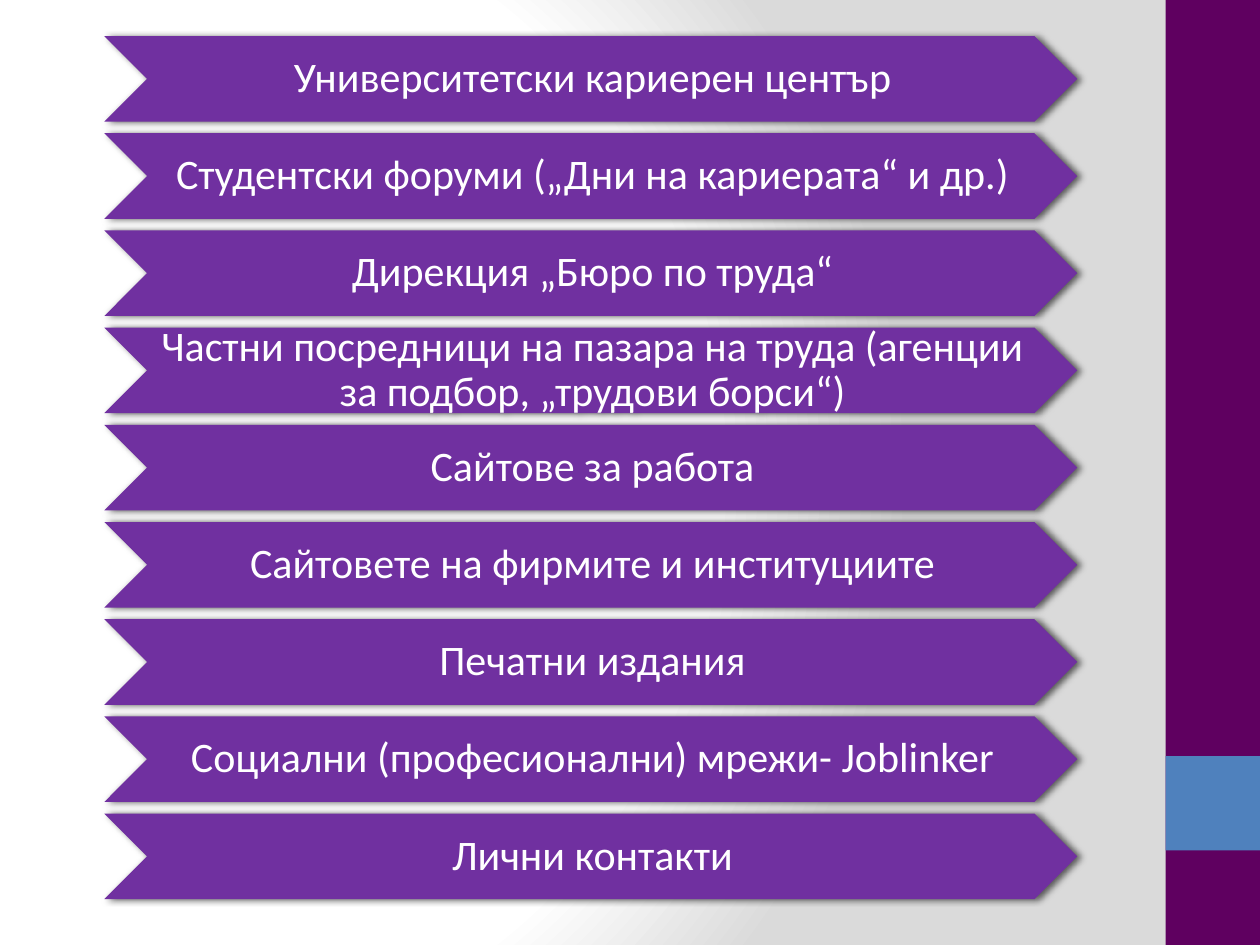
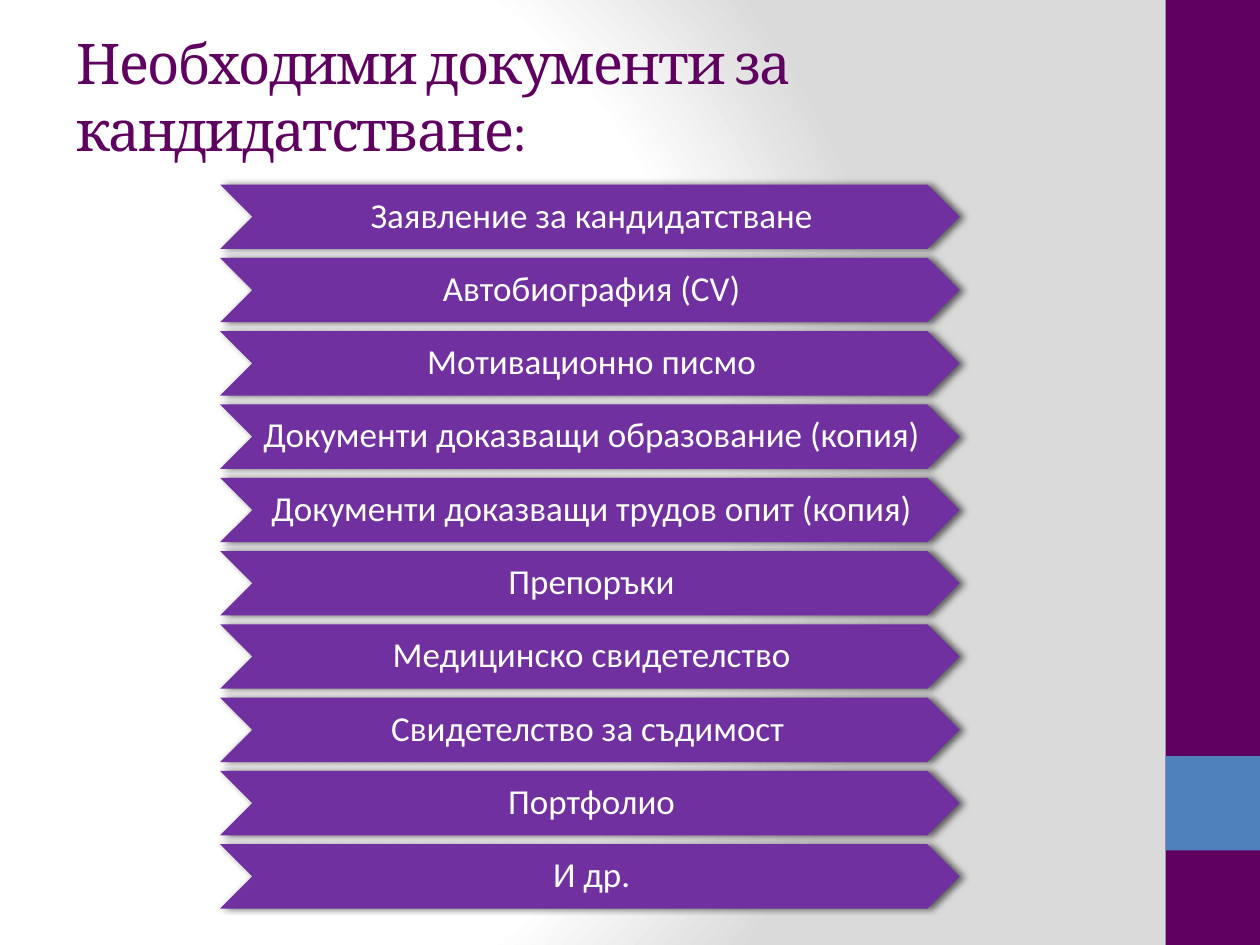
import dataclasses
import typing

import pptx
import pptx.dml.color
import pptx.enum.shapes
import pptx.enum.text
import pptx.oxml
import pptx.oxml.ns
import pptx.util

Pt = pptx.util.Pt
SHAPES = pptx.enum.shapes.MSO_SHAPE
ALIGN = pptx.enum.text.PP_ALIGN
MIDDLE = pptx.enum.text.MSO_ANCHOR.MIDDLE

COLORS = {
    "white": "FFFFFF",
    "grey": "DADADA",
    "plum": "5F0060",
    "blue": "4F81BD",
    "purple": "7030A0",
    "black": "000000",
}
WIDTH, HEIGHT = 720, 540


@dataclasses.dataclass(frozen=True)
class Box:
    left: float
    top: float
    width: float
    height: float

    def points(self) -> list:
        return [Pt(side) for side in dataclasses.astuple(self)]


@dataclasses.dataclass(frozen=True)
class Band:
    box: Box
    color: str


@dataclasses.dataclass(frozen=True)
class Stack:
    """Equal chevrons, one below the other, starting from the first box."""
    first: Box
    pitch: float
    size: float
    inset: float
    labels: tuple[str, ...]


@dataclasses.dataclass(frozen=True)
class Page:
    stack: Stack
    title: str = ""


BANDS = (
    Band(Box(666, 0, 54, HEIGHT), "plum"),
    Band(Box(666, 432, 54, 54), "blue"),
)
TITLE = Box(36.7, 9.4, 600, 90)

PAGES = (
    Page(Stack(Box(59.6, 20.6, 556, 48.9), 55.54, 24, 1.2, (
        "Университетски кариерен център",
        "Студентски форуми („Дни на кариерата“ и др.)",
        "Дирекция „Бюро по труда“",
        "Частни посредници на пазара на труда (агенции за подбор, „трудови борси“)",
        "Сайтове за работа",
        "Сайтовете на фирмите и институциите",
        "Печатни издания",
        "Социални (професионални) мрежи- Joblinker",
        "Лични контакти",
    ))),
    Page(Stack(Box(125.8, 105.5, 422.6, 36.8), 41.88, 20, 1, (
        "Заявление за кандидатстване",
        "Автобиография (CV)",
        "Мотивационно писмо",
        "Документи доказващи образование (копия)",
        "Документи доказващи трудов опит (копия)",
        "Препоръки",
        "Медицинско свидетелство",
        "Свидетелство за съдимост ",
        "Портфолио",
        "И др.",
    )), "Необходими документи за кандидатстване:"),
)


def apply(target: typing.Any, values: dict) -> None:
    for name, value in values.items():
        setattr(target, name, value)


def color(name: str) -> pptx.dml.color.RGBColor:
    return pptx.dml.color.RGBColor.from_string(COLORS[name])


def xml(tag: str, attrs: str, inner: str) -> typing.Any:
    space = pptx.oxml.ns.nsdecls("a")
    return pptx.oxml.parse_xml(f"<a:{tag} {space} {attrs}>{inner}</a:{tag}>")


def paint(master: typing.Any) -> None:
    """Give the master a round gradient that turns grey to the right."""
    master.background.fill.gradient()
    tag = pptx.oxml.ns.qn("a:gradFill")
    old = next(master.element.iter(tag))
    stops = "".join(
        f'<a:gs pos="{place * 1000}"><a:srgbClr val="{COLORS[name]}"/></a:gs>'
        for place, name in ((0, "white"), (75, "white"), (100, "grey"))
    )
    old.getparent().replace(old, xml("gradFill", 'rotWithShape="1"', (
        f'<a:gsLst>{stops}</a:gsLst><a:path path="circle">'
        '<a:fillToRect l="20000" t="50000" r="100000" b="50000"/></a:path>'
    )))


def draw(slide: typing.Any, kind: typing.Any, box: Box, fill: str) -> typing.Any:
    shape = slide.shapes.add_shape(kind, *box.points())
    shape.fill.solid()
    shape.fill.fore_color.rgb = color(fill)
    shape.line.fill.background()
    shape.shadow.inherit = False
    return shape


def shade(shape: typing.Any) -> None:
    effects = shape.element.spPr.find(pptx.oxml.ns.qn("a:effectLst"))
    attrs = f'blurRad="{Pt(4)}" dist="{Pt(2)}" dir="0" rotWithShape="0"'
    effects.append(xml("outerShdw", attrs, (
        f'<a:srgbClr val="{COLORS["black"]}"><a:alpha val="60000"/></a:srgbClr>'
    )))


def write(shape: typing.Any, text: str, font: dict, tint: str,
          frame: dict, para: dict) -> typing.Any:
    body = shape.text_frame
    apply(body, {"word_wrap": True, "vertical_anchor": MIDDLE, **frame})
    line = body.paragraphs[0]
    apply(line, para)
    run = line.add_run()
    run.text = text
    apply(run.font, font)
    run.font.color.rgb = color(tint)
    return run


def head(slide: typing.Any, text: str) -> None:
    shape = slide.shapes.add_textbox(*TITLE.points())
    font = {"name": "Cambria", "size": Pt(32)}
    run = write(shape, text, font, "plum", {}, {"alignment": ALIGN.LEFT})
    run.font._element.set("spc", "-100")


def pile(slide: typing.Any, stack: Stack) -> None:
    font = {"name": "Calibri", "size": Pt(stack.size)}
    frame = {
        "margin_left": Pt(2),
        "margin_right": 0,
        "margin_top": Pt(stack.inset),
        "margin_bottom": Pt(stack.inset),
    }
    para = {"alignment": ALIGN.CENTER, "line_spacing": 0.9}
    for row, label in enumerate(stack.labels):
        top = stack.first.top + row * stack.pitch
        box = dataclasses.replace(stack.first, top=top)
        shape = draw(slide, SHAPES.CHEVRON, box, "purple")
        shade(shape)
        write(shape, label, font, "white", frame, para)


def main() -> None:
    deck = pptx.Presentation()
    apply(deck, {"slide_width": Pt(WIDTH), "slide_height": Pt(HEIGHT)})
    paint(deck.slide_master)
    for page in PAGES:
        slide = deck.slides.add_slide(deck.slide_layouts[6])
        for band in BANDS:
            draw(slide, SHAPES.RECTANGLE, band.box, band.color)
        if page.title:
            head(slide, page.title)
        pile(slide, page.stack)
    deck.save("out.pptx")


if __name__ == "__main__":
    main()
